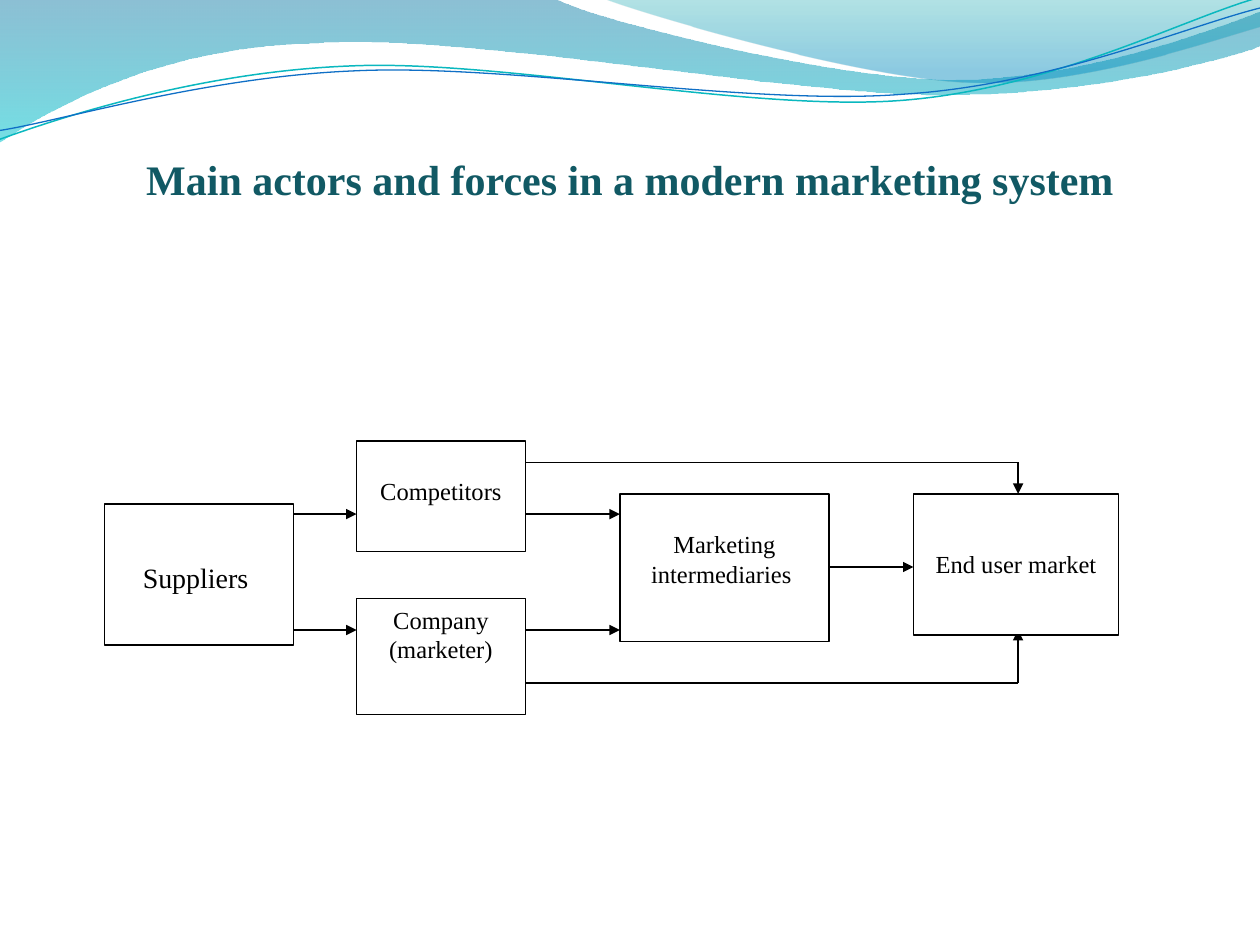
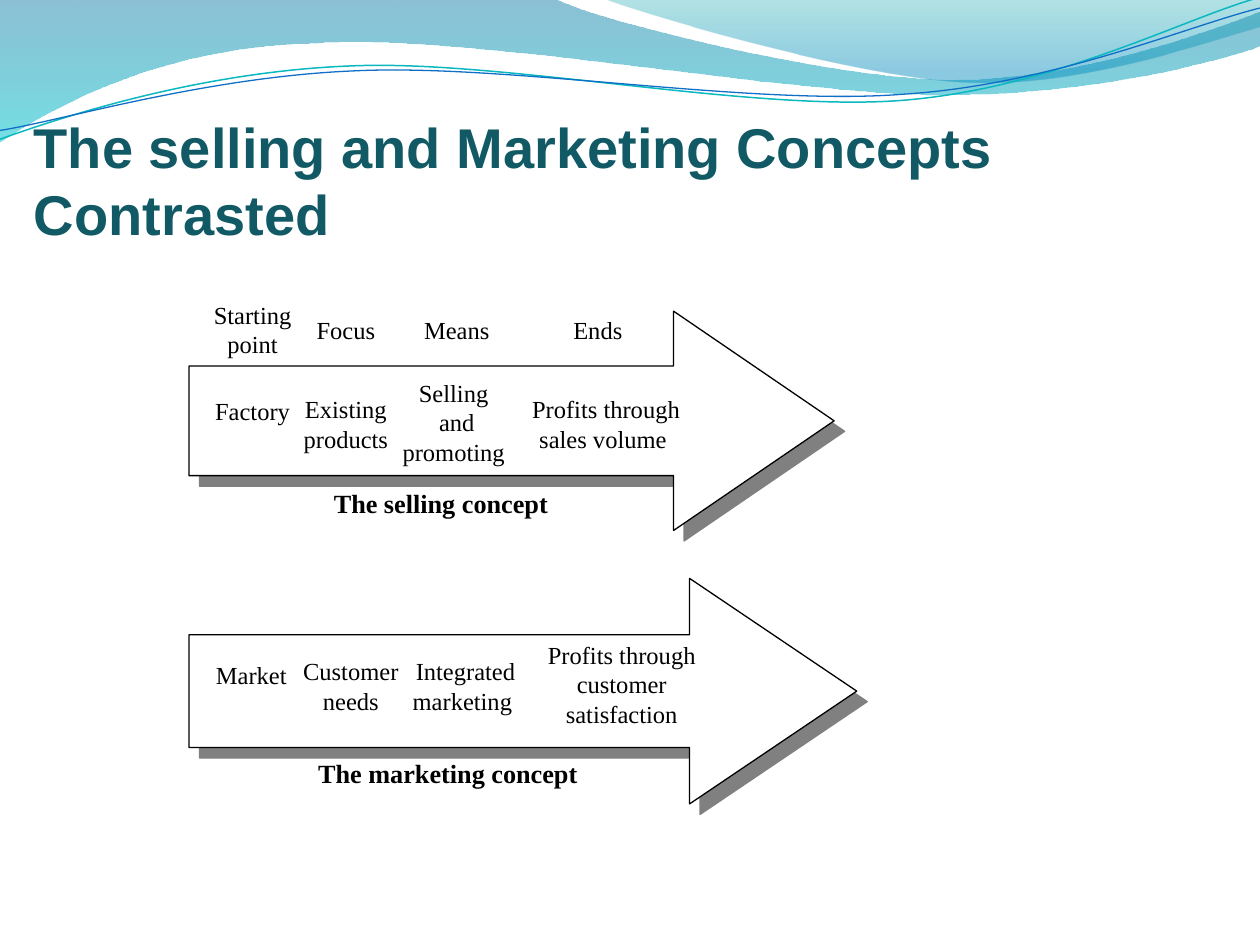
from lxml import etree
from pptx import Presentation
from pptx.dml.color import RGBColor
from pptx.enum.shapes import MSO_CONNECTOR, MSO_SHAPE
from pptx.enum.text import MSO_ANCHOR, PP_ALIGN
from pptx.oxml.ns import qn
from pptx.util import Inches, Pt

STRAIGHT = MSO_CONNECTOR.STRAIGHT
RECTANGLE, RIGHT_ARROW = MSO_SHAPE.RECTANGLE, MSO_SHAPE.RIGHT_ARROW
TOP = MSO_ANCHOR.TOP
LEFT, CENTER = PP_ALIGN.LEFT, PP_ALIGN.CENTER

COLORS = {
    "ink": "000000", "paper": "FFFFFF", "title": "115964", "shadow": "808080",
    "deep": "0074A1", "aqua": "00C6CF", "teal": "00A1A9", "sky": "008BBF",
    "teal_line": "0AB8BF", "blue_line": "0F6FC6",
}
SERIF, SANS = "Times New Roman", "Arial"
INSET = 0.05
LABEL_LINE = 0.23  # height of one 14 pt line
RIBBON_TILT = 357.3

# Each wave is a start point followed by segments: 2 numbers for a line, 6 for a curve.
BANDS = [
    ([(0, 0), (4.4, -0.01), (4.76, 0.17, 6.64, 0.63, 7.58, 0.63),
      (8.53, 0.63, 9.58, 0.26, 10, 0.09), (10.01, 0.36),
      (9.83, 0.44, 8.7, 0.76, 7.46, 0.75), (6.22, 0.75, 3.82, 0.28, 2.57, 0.34),
      (1.29, 0.36, 0.46, 0.83, -0.01, 1.13)],
     [(0, "deep", 45), (1, "aqua", 55)]),
    ([(4.79, -0.01), (5.09, 0.11, 6.82, 0.62, 7.69, 0.65),
      (8.56, 0.69, 9.61, 0.32, 10, 0.21), (10, 0)],
     [(0, "teal", 30), (0.8, "sky", 45)]),
]
RIBBONS = [
    ([(-0.02, 0.87), (0.47, 0.72, 1.58, 0.41, 2.78, 0.42),
      (3.96, 0.42, 5.91, 0.93, 7.12, 0.9), (8.32, 0.87, 9.4, 0.36, 10, 0.22)],
     "teal_line", 0.85),
    ([(-0.02, 0.8), (0.46, 0.75, 1.64, 0.45, 2.83, 0.46),
      (4.03, 0.46, 5.96, 0.89, 7.16, 0.85), (8.35, 0.83, 9.42, 0.42, 10.02, 0.3)],
     "blue_line", 0.75),
]


def rgb(name):
    return RGBColor.from_string(COLORS[name])


def bend(shape, segments):
    """Join every three straight steps that stand for a curve into one cubic curve."""
    steps = shape.element.spPr.iter(qn("a:lnTo"))
    steps = iter(list(steps))
    for segment in segments:
        nodes = [next(steps) for _ in range(len(segment) // 2)]
        if len(nodes) == 1:
            continue
        curve = etree.Element(qn("a:cubicBezTo"))
        nodes[0].addprevious(curve)
        for node in nodes:
            curve.append(node[0])
            node.getparent().remove(node)


def write(frame, text, size=14, font=SERIF, color="ink", bold=False, align=CENTER,
          top_inset=INSET):
    frame.word_wrap = True
    frame.vertical_anchor = TOP
    frame.margin_top = Inches(top_inset)
    for index, line in enumerate(text.split("\n")):
        paragraph = frame.add_paragraph() if index else frame.paragraphs[0]
        paragraph.alignment = align
        run = paragraph.add_run()
        run.text = line
        run.font.size, run.font.name, run.font.bold = Pt(size), font, bold
        run.font.color.rgb = rgb(color)


class Deck:
    def __init__(self):
        self.prs = Presentation()
        self.prs.slide_width, self.prs.slide_height = Inches(10), Inches(7.5)
        self.shapes = None

    def new_slide(self):
        self.shapes = self.prs.slides.add_slide(self.prs.slide_layouts[6]).shapes
        for outline, stops in BANDS:
            self.band(outline, stops)
        for outline, color, weight in RIBBONS:
            ribbon = self.wave(outline, closed=False)
            ribbon.rotation = RIBBON_TILT
            ribbon.fill.background()
            self.stroke(ribbon, color, weight)

    def stroke(self, shape, color="ink", weight=0.75):
        shape.line.color.rgb = rgb(color)
        shape.line.width = Pt(weight)

    def wave(self, outline, closed):
        start, *segments = outline
        points = [(Inches(x), Inches(y)) for segment in segments
                  for x, y in zip(segment[::2], segment[1::2])]
        builder = self.shapes.build_freeform(Inches(start[0]), Inches(start[1]))
        builder.add_line_segments(points, close=closed)
        shape = builder.convert_to_shape()
        bend(shape, segments)
        shape.shadow.inherit = False
        return shape

    def band(self, outline, stops):
        """Draw a filled wave with a see-through gradient from top to bottom."""
        shape = self.wave(outline, closed=True)
        shape.line.fill.background()
        shape.fill.gradient()
        shape.fill.gradient_angle = 270
        for stop, (position, color, _) in zip(shape.fill.gradient_stops, stops):
            stop.position = position
            stop.color.rgb = rgb(color)
        tints = shape.element.spPr.iter(qn("a:srgbClr"))
        for tint, (_, _, opacity) in zip(tints, stops):
            etree.SubElement(tint, qn("a:alpha"), val=str(opacity * 1000))

    def block(self, kind, left, top, width, height):
        shape = self.shapes.add_shape(
            kind, Inches(left), Inches(top), Inches(width), Inches(height))
        shape.shadow.inherit = False
        shape.fill.solid()
        shape.fill.fore_color.rgb = rgb("paper")
        self.stroke(shape)
        return shape

    def actor(self, text, left, top, width, height, **style):
        write(self.block(RECTANGLE, left, top, width, height).text_frame, text, **style)

    def big_arrow(self, left, top, width, height, head):
        arrow = self.block(RIGHT_ARROW, left, top, width, height)
        arrow.adjustments[0], arrow.adjustments[1] = 0.5, head
        effects = arrow.element.spPr.find(qn("a:effectLst"))
        shadow = etree.SubElement(effects, qn("a:outerShdw"), dist=str(Pt(8.5)),
                                  dir="2700000", algn="ctr", rotWithShape="0")
        etree.SubElement(shadow, qn("a:srgbClr"), val=COLORS["shadow"])

    def link(self, x1, y1, x2, y2, arrow=True):
        line = self.shapes.add_connector(
            STRAIGHT, Inches(x1), Inches(y1), Inches(x2), Inches(y2))
        self.stroke(line)
        properties = line.element.spPr
        if arrow:
            etree.SubElement(properties.find(qn("a:ln")), qn("a:tailEnd"), type="triangle")
        etree.SubElement(properties, qn("a:effectLst"))

    def label(self, text, left, top, width, height, **style):
        box = self.shapes.add_textbox(
            Inches(left), Inches(top), Inches(width), Inches(height))
        write(box.text_frame, text, **style)

    def title(self, text, left, top, width, height, **style):
        self.label(text, left, top, width, height, color="title", bold=True, **style)


def marketing_system(deck):
    deck.new_slide()
    supplier_right, maker_left, maker_right = 2.33, 2.83, 4.17
    dealer_left, dealer_right, market_left, market_middle = 4.92, 6.58, 7.25, 8.08
    upper, lower, over, under = 4.08, 5, 3.67, 5.42
    maker_width = maker_right - maker_left

    deck.link(market_middle, under, market_middle, lower)
    one_line_down = INSET + LABEL_LINE
    deck.actor("Suppliers ", 0.83, 4, 1.5, 1.12, size=16, top_inset=0.45)
    deck.actor("Competitors", maker_left, 3.5, maker_width, 0.88,
               top_inset=one_line_down)
    deck.actor("Company (marketer)", maker_left, 4.75, maker_width, 0.92)
    deck.actor("Marketing intermediaries ", dealer_left, 3.92,
               dealer_right - dealer_left, 1.17, top_inset=one_line_down)
    deck.actor("End user market", market_left, 3.92, 1.63, 1.12, top_inset=0.44)

    for y in (lower, upper):
        deck.link(supplier_right, y, maker_left, y)
        deck.link(maker_right, y, dealer_left, y)
    deck.link(dealer_right, 4.5, market_left, 4.5)
    for y in (over, under):
        deck.link(maker_right, y, market_middle, y, arrow=False)
    deck.link(market_middle, over, market_middle, 3.92)
    deck.title("Main actors and forces in a modern marketing system",
               0, 1.17, 10, 0.76, size=24)


def concepts_contrasted(deck):
    deck.new_slide()
    deck.big_arrow(1.5, 2.47, 5.12, 1.74, head=0.732)
    selling = [("Factory", 1.38, 3.09, 1.25), ("Existing products", 2.12, 3.08, 1.25),
               ("Selling \nand promoting ", 3, 2.95, 1.25),
               ("Profits through sales volume ", 4, 3.08, 1.62)]
    for text, left, top, width in selling:
        deck.label(text, left, top, width, 0.77)
    headings = [("Starting point", 1.38, 2.33), ("Focus", 2.12, 2.45),
                ("Means", 3, 2.45), ("Ends", 4.12, 2.45)]
    for text, left, top in headings:
        deck.label(text, left, top, 1.25, 0.64)
    deck.label("The selling concept", 2.25, 3.82, 2.5, 0.64, size=15, bold=True)

    deck.big_arrow(1.5, 4.59, 5.3, 1.79, head=0.741)
    marketing = [("Market", 1.33, 5.19, 1.33), ("Customer needs", 2.12, 5.16, 1.33),
                 ("Integrated marketing ", 3.03, 5.16, 1.33),
                 ("Profits through customer satisfaction", 4.07, 5.03, 1.73)]
    for text, left, top, width in marketing:
        deck.label(text, left, top, width, 0.83)
    deck.label("The marketing concept", 2.26, 5.96, 2.59, 0.67, size=15, bold=True)

    deck.title("The selling and Marketing Concepts Contrasted",
               0.17, 0.84, 9.58, 1.17, size=32, font=SANS, align=LEFT)


def main():
    deck = Deck()
    marketing_system(deck)
    concepts_contrasted(deck)
    deck.prs.save("out.pptx")


if __name__ == "__main__":
    main()
